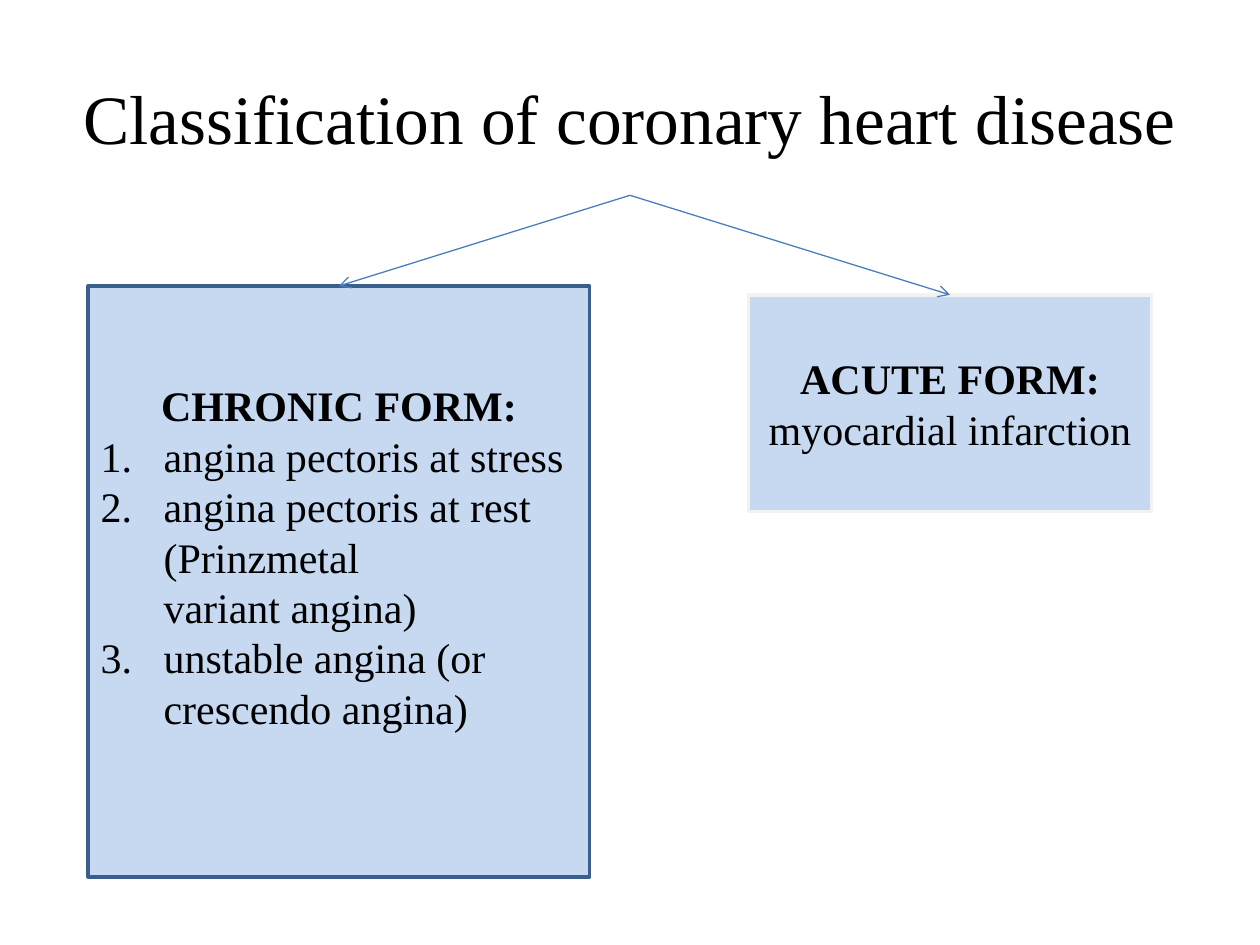
from lxml import etree
from pptx import Presentation, util as u
from pptx.dml.color import RGBColor
from pptx.enum import shapes, text
from pptx.oxml.ns import qn

THEME = {
    "font": "Times New Roman", "title": 39.6, "body": 24,
    "ink": "000000", "fill": "C6D9F1", "arrow": "4B7EBC",
    "chronic": "3A5F8C", "acute": "F2F2F2",
}
TITLE = "Classification of coronary heart disease"
TITLE_AREA = (0.5, 0.3, 9, 1.25)
FORMS = [
    {"area": (0.7, 2.27, 3.98, 4.69), "line": "chronic", "bottom_inset": 0.45,
     "heading": "CHRONIC FORM:", "detail": "",
     "items": ["angina pectoris at stress",
               "angina pectoris at rest (Prinzmetal variant\u00a0angina)",
               "unstable\u00a0angina (or crescendo angina)"]},
    {"area": (5.94, 2.34, 3.2, 1.72), "line": "acute", "bottom_inset": 0.05,
     "heading": "ACUTE FORM: ", "detail": "myocardial infarction", "items": []},
]


def color(name):
    return RGBColor.from_string(THEME[name])


def add_run(paragraph, words, size, bold=False):
    run = paragraph.add_run()
    run.text = words
    values = {"name": THEME["font"], "size": u.Pt(THEME[size]), "bold": bold}
    for key, value in values.items():
        setattr(run.font, key, value)
    run.font.color.rgb = color("ink")


def set_frame(frame, bottom_inset=0.05):
    frame.word_wrap = True
    frame.vertical_anchor = text.MSO_ANCHOR.MIDDLE
    frame.margin_bottom = u.Inches(bottom_inset)
    paragraph = frame.paragraphs[0]
    paragraph.alignment = text.PP_ALIGN.CENTER
    return paragraph


def number_paragraph(paragraph):
    """Give a paragraph an automatic number and a hanging indent."""
    paragraph.alignment = text.PP_ALIGN.LEFT
    properties = paragraph._p.get_or_add_pPr()
    properties.set("marL", str(u.Inches(0.5)))
    properties.set("indent", str(-u.Inches(0.5)))
    etree.SubElement(properties, qn("a:buFont"), typeface="+mj-lt")
    etree.SubElement(properties, qn("a:buAutoNum"), type="arabicPeriod")


def add_title(slide):
    box = slide.shapes.add_textbox(*map(u.Inches, TITLE_AREA))
    add_run(set_frame(box.text_frame), TITLE, "title")


def add_form(slide, form):
    shape = slide.shapes.add_shape(
        shapes.MSO_SHAPE.RECTANGLE, *map(u.Inches, form["area"]))
    shape.shadow.inherit = False
    shape.fill.solid()
    shape.fill.fore_color.rgb = color("fill")
    shape.line.color.rgb = color(form["line"])
    shape.line.width = u.Pt(2)
    frame = shape.text_frame
    heading = set_frame(frame, form["bottom_inset"])
    add_run(heading, form["heading"], "body", bold=True)
    if form["detail"]:
        add_run(heading, form["detail"], "body")
    for item in form["items"]:
        paragraph = frame.add_paragraph()
        number_paragraph(paragraph)
        add_run(paragraph, item, "body")


def add_arrow(slide, form):
    """Draw an arrow from below the title to the top centre of a form."""
    title_left, title_top, title_width, title_height = TITLE_AREA
    left, top, width, _ = form["area"]
    ends = (title_left + title_width / 2, title_top + title_height,
            left + width / 2, top)
    arrow = slide.shapes.add_connector(
        shapes.MSO_CONNECTOR.STRAIGHT, *map(u.Inches, ends))
    arrow.line.color.rgb = color("arrow")
    arrow.line.width = u.Pt(0.75)
    etree.SubElement(arrow.line._get_or_add_ln(), qn("a:tailEnd"), type="arrow")
    etree.SubElement(arrow._element.spPr, qn("a:effectLst"))


def main():
    presentation = Presentation()
    presentation.slide_width = u.Inches(10)
    presentation.slide_height = u.Inches(7.5)
    slide = presentation.slides.add_slide(presentation.slide_layouts[6])
    add_title(slide)
    for add_part in (add_form, add_arrow):
        for form in FORMS:
            add_part(slide, form)
    presentation.save("out.pptx")


if __name__ == "__main__":
    main()
